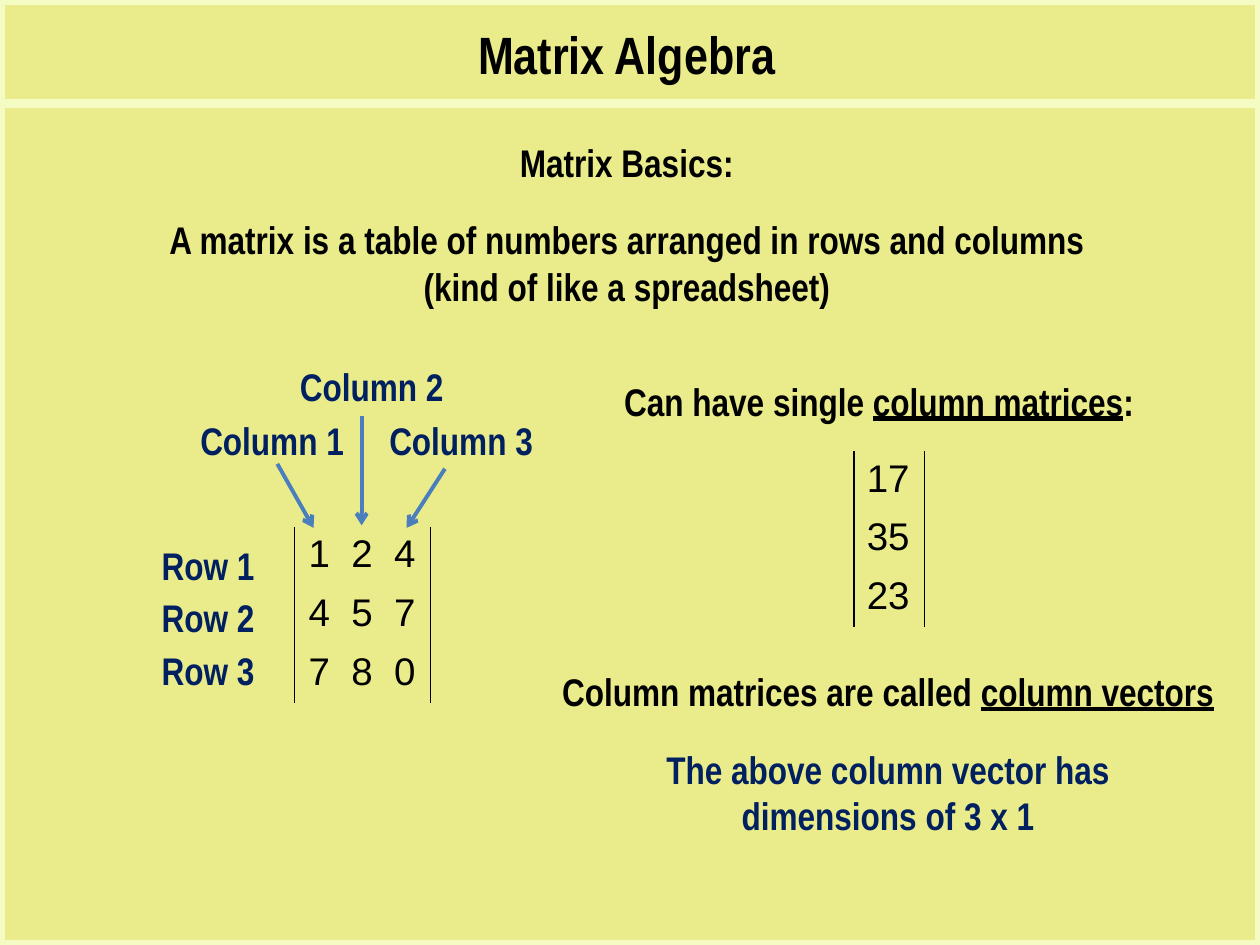
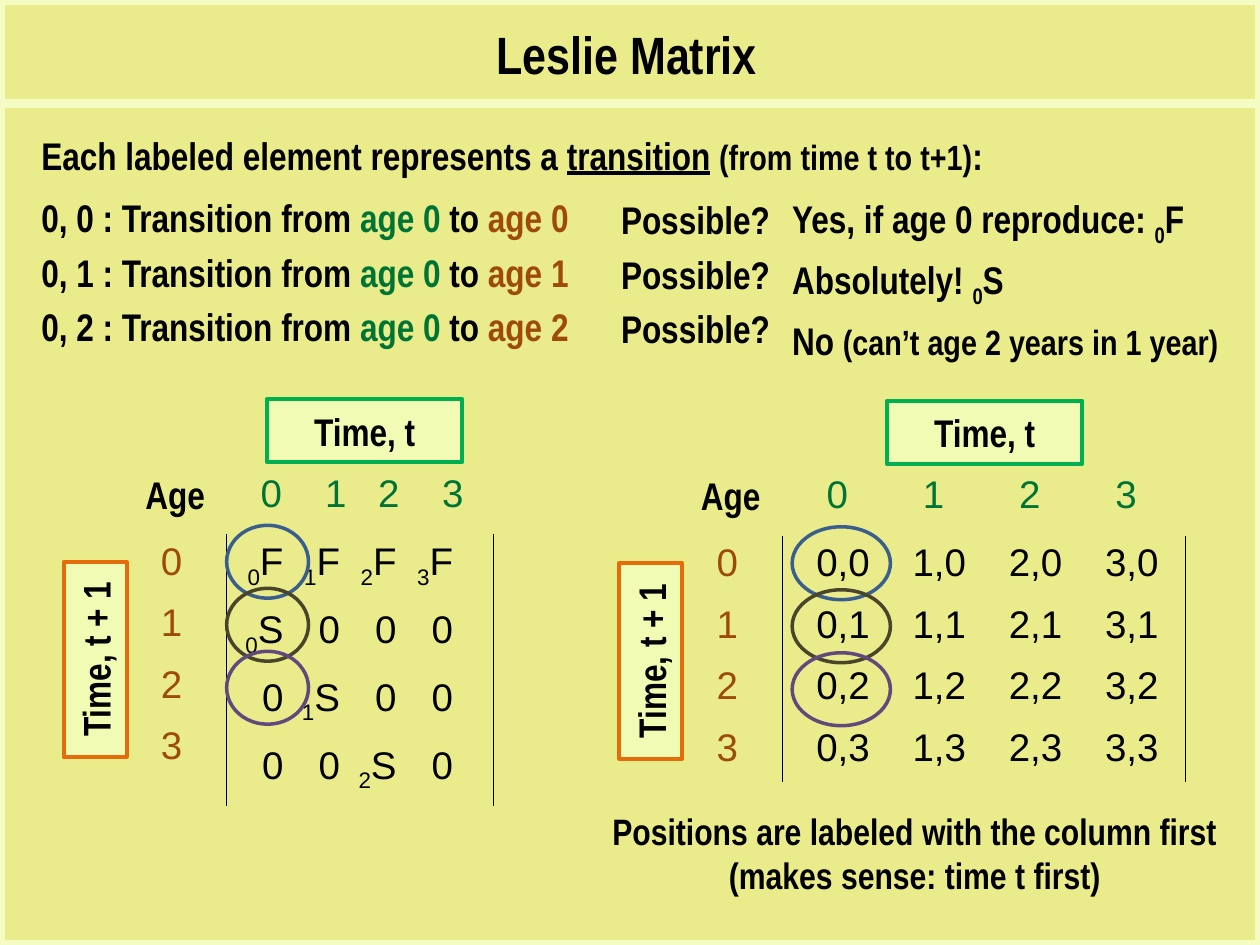
import collections
import dataclasses

import lxml.etree
import pptx
import pptx.dml.color
import pptx.enum.shapes
import pptx.enum.text
import pptx.oxml.ns
import pptx.util

Cm = pptx.util.Cm
Pt = pptx.util.Pt
qn = pptx.oxml.ns.qn
ALIGN = pptx.enum.text.PP_ALIGN
ANCHOR = pptx.enum.text.MSO_ANCHOR
SHAPE = pptx.enum.shapes.MSO_SHAPE


@dataclasses.dataclass(frozen=True)
class Theme:
    background: str = "EAEC8C"
    band: str = "F4FCC4"
    ink: str = "000000"
    navy: str = "002060"
    arrow: str = "4B7EBC"
    panel: str = "F1FBB3"
    now: str = "007434"
    later: str = "9D4B07"
    now_line: str = "00B050"
    later_line: str = "E46C0A"
    rings: tuple = ("3A5F8C", "4A452A", "604A7B")
    title_size: int = 30
    text_size: int = 22
    footnote_size: int = 21
    aside_size: int = 20
    label_font: str = "Arial Narrow"
    number_font: str = "Arial"


THEME = Theme()
LABEL = {"name": THEME.label_font, "size": THEME.text_size, "bold": True, "color": THEME.ink}
TITLE = {**LABEL, "size": THEME.title_size}
NAVY_LABEL = {**LABEL, "color": THEME.navy}
NUMBER = {**LABEL, "name": THEME.number_font, "bold": False}
UNDERLINED = {"underline": True}
SUBSCRIPT = {"baseline": "-25000"}
ASIDE = {"size": THEME.aside_size}
NOW = {"color": THEME.now}
LATER = {"color": THEME.later}
LABEL_HEIGHT = 1.19
NO_STYLE_NO_GRID = "{2D5ABB26-0587-4C30-8999-92F81FD0307C}"


class Box(collections.namedtuple("Box", "left top width height")):
    def inner(self, left, top, width, height):
        return Box(self.left + left, self.top + top, width, height)

    def lengths(self):
        return [Cm(value) for value in self]


def rgb(color):
    return pptx.dml.color.RGBColor.from_string(color)


def format_run(run, style):
    for key, value in style.items():
        if key == "color":
            run.font.color.rgb = rgb(value)
        elif key == "baseline":
            run._r.get_or_add_rPr().set(key, value)
        else:
            setattr(run.font, key, Pt(value) if key == "size" else value)


def write(frame, paragraphs, style, align=ALIGN.LEFT, gaps=(), tabs=()):
    for index, runs in enumerate(paragraphs):
        paragraph = frame.add_paragraph() if index else frame.paragraphs[0]
        paragraph.alignment = align
        paragraph.space_before = Pt(gaps[index] if index < len(gaps) else 0)
        if tabs:
            stops = lxml.etree.SubElement(paragraph._p.get_or_add_pPr(), qn("a:tabLst"))
            for position in tabs:
                lxml.etree.SubElement(stops, qn("a:tab"), pos=str(Cm(position)), algn="r")
        for part in [runs] if isinstance(runs, str) else runs:
            text, override = (part, {}) if isinstance(part, str) else part
            run = paragraph.add_run()
            run.text = text
            format_run(run, {**style, **override})


def set_frame(frame, anchor=ANCHOR.TOP):
    settings = {
        "word_wrap": True,
        "auto_size": pptx.enum.text.MSO_AUTO_SIZE.NONE,
        "vertical_anchor": anchor,
    }
    for key, value in settings.items():
        setattr(frame, key, value)


def add_text(slide, box, paragraphs, style=LABEL, align=ALIGN.CENTER, gaps=()):
    frame = slide.shapes.add_textbox(*box.lengths()).text_frame
    set_frame(frame)
    write(frame, paragraphs, style, align, gaps)


def fill_placeholder(shape, box, paragraphs, style, align, gaps=(), anchor=ANCHOR.TOP):
    for key, value in zip(box._fields, box.lengths()):
        setattr(shape, key, value)
    set_frame(shape.text_frame, anchor)
    write(shape.text_frame, paragraphs, style, align, gaps)
    for paragraph in shape.text_frame.paragraphs:
        properties = paragraph._p.get_or_add_pPr()
        for key in ("marL", "indent"):
            properties.set(key, "0")
        lxml.etree.SubElement(properties, qn("a:buNone"))


def add_shape(slide, kind, box, line, width, fill=None):
    shape = slide.shapes.add_shape(kind, *box.lengths())
    shape.shadow.inherit = False
    shape.line.color.rgb = rgb(line)
    shape.line.width = Pt(width)
    if fill:
        shape.fill.solid()
        shape.fill.fore_color.rgb = rgb(fill)
    else:
        shape.fill.background()
    return shape


def add_line(slide, start, end, color, width, arrow=False):
    ends = [Cm(value) for value in (*start, *end)]
    connector = slide.shapes.add_connector(pptx.enum.shapes.MSO_CONNECTOR.STRAIGHT, *ends)
    connector.line.color.rgb = rgb(color)
    connector.line.width = Pt(width)
    properties = connector.element.spPr
    if arrow:
        lxml.etree.SubElement(properties.find(qn("a:ln")), qn("a:tailEnd"), type="arrow")
    lxml.etree.SubElement(properties, qn("a:effectLst"))
    return connector


def add_side_borders(cell):
    properties = cell._tc.get_or_add_tcPr()
    for index, side in enumerate(("a:lnL", "a:lnR")):
        line = lxml.etree.Element(qn(side), w=str(Pt(1)))
        fill = lxml.etree.SubElement(line, qn("a:solidFill"))
        lxml.etree.SubElement(fill, qn("a:srgbClr"), val=THEME.ink)
        properties.insert(index, line)


def add_matrix(slide, box, rows, style=NUMBER, align=ALIGN.LEFT, tabs=(), bars=True):
    table = slide.shapes.add_table(len(rows), 1, *box.lengths()).table
    table.first_row = table.horz_banding = False
    table._tbl.tblPr.find(qn("a:tableStyleId")).text = NO_STYLE_NO_GRID
    for index, runs in enumerate(rows):
        table.rows[index].height = Cm(box.height / len(rows))
        cell = table.cell(index, 0)
        cell.fill.background()
        if tabs:
            cell.margin_right = 0
        if bars:
            add_side_borders(cell)
        write(cell.text_frame, [runs], style, align, tabs=tabs)


def term(text):
    return [(text[:-1], SUBSCRIPT), text[-1]] if text[-1].isalpha() else [text]


def tabbed(cells):
    return [part for cell in cells for part in ("\t", *term(cell))]


def even_tabs(first, step, count):
    return [first + step * index for index in range(count)]


def add_master_bands(presentation, slide):
    master = presentation.slide_master
    master.background.fill.solid()
    master.background.fill.fore_color.rgb = rgb(THEME.background)
    bands = (
        add_line(slide, (0, 2.08), (25.4, 2.08), THEME.band, 5),
        add_shape(slide, SHAPE.RECTANGLE, Box(0, 0, 25.4, 19.05), THEME.band, 6),
    )
    for number, band in enumerate(bands, 20):
        band.element.xpath(".//p:cNvPr")[0].set("id", str(number))
        master.shapes.element.append(band.element)


def add_slide(presentation, title):
    slide = presentation.slides.add_slide(presentation.slide_layouts[1])
    fill_placeholder(slide.shapes.title, Box(1.88, 0.3, 21.51, 1.55), [title], TITLE,
                     ALIGN.CENTER, anchor=ANCHOR.MIDDLE)
    return slide


def add_labeled_matrix(slide, box):
    for number, (left, top) in enumerate(((1.29, 1.09), (3.3, 0), (5.1, 1.09)), 1):
        add_text(slide, box.inner(left, top, 3.71, LABEL_HEIGHT), [f"Column {number}"], NAVY_LABEL)
    for index in range(3):
        add_text(slide, box.inner(0, 3.61 + 1.06 * index, 3.71, LABEL_HEIGHT),
                 [f"Row {index + 1}"], NAVY_LABEL)
    add_matrix(slide, box.inner(3.6, 3.43, 2.74, 3.56),
               [tabbed(digits) for digits in ("124", "457", "780")],
               tabs=even_tabs(0.46, 0.86, 3))
    arrows = ((3.25, 2.16, 3.98, 3.45), (4.95, 1.19, 4.95, 3.4), (6.63, 2.26, 5.86, 3.45))
    for x1, y1, x2, y2 in arrows:
        add_line(slide, (box.left + x1, box.top + y1), (box.left + x2, box.top + y2),
                 THEME.arrow, 2.25, arrow=True)


def add_column_vector(slide, box):
    add_text(slide, box.inner(0, 0, box.width, LABEL_HEIGHT),
             [["Can have single ", ("column matrices", UNDERLINED), ":"]])
    add_matrix(slide, box.inner(6.55, 1.6, 1.42, 3.56), ["17", "35", "23"])
    navy = {"color": THEME.navy}
    add_text(slide, box.inner(0.13, 5.85, 14.2, 3.71), [
        ["Column matrices are called ", ("column vectors", UNDERLINED)],
        [("The above column vector has", navy)],
        [("dimensions of 3 x 1", navy)],
    ], gaps=(0, 18))


def build_matrix_slide(slide):
    fill_placeholder(slide.placeholders[1], Box(1.14, 2.67, 22.99, 4.14), [
        "Matrix Basics:",
        "A matrix is a table of numbers arranged in rows and columns",
        "(kind of like a spreadsheet)",
    ], LABEL, ALIGN.CENTER, gaps=(0, 18))
    add_labeled_matrix(slide, Box(2.34, 7.19, 8.81, 6.99))
    add_column_vector(slide, Box(10.67, 7.49, 14.1, 9.56))


def add_time_box(slide, box, text, line, rotation=0):
    shape = add_shape(slide, SHAPE.RECTANGLE, box, line, 2.25, THEME.panel)
    shape.rotation = rotation
    set_frame(shape.text_frame, ANCHOR.MIDDLE)
    write(shape.text_frame, [text], LABEL, ALIGN.CENTER)


def add_age_panel(slide, box, rows, row_height, tabs, header_tabs, time_left, ring_left, ring_width):
    ages = [str(age) for age in range(4)]
    matrix_left, matrix_top = 3.29, 2.72
    width = box.width - matrix_left
    add_time_box(slide, box.inner(time_left, 0, 3.94, 1.27), "Time, t", THEME.now_line)
    add_time_box(slide, box.inner(-1.33, 4.61, 3.94, 1.27), "Time, t + 1", THEME.later_line, 270)
    add_text(slide, box.inner(1.08, 1.32, 2.34, LABEL_HEIGHT), ["Age"])
    add_matrix(slide, box.inner(matrix_left, 1.35, width, LABEL_HEIGHT), [tabbed(ages)],
               {**NUMBER, **NOW}, tabs=header_tabs, bars=False)
    add_matrix(slide, box.inner(1.33, matrix_top, 1.7, 4.96), ages,
               {**NUMBER, **LATER}, ALIGN.CENTER, bars=False)
    add_matrix(slide, box.inner(matrix_left, matrix_top, width, row_height * len(rows)),
               [tabbed(cells) for cells in rows], tabs=tabs)
    for index, color in enumerate(THEME.rings):
        add_shape(slide, SHAPE.OVAL,
                  box.inner(ring_left, 2.54 + 1.27 * index, ring_width, 1.47), color, 2)


def add_transitions(slide, box):
    intro = ["Each labeled element represents a ", ("transition", UNDERLINED), " ",
             ("(from time t to t+1)", ASIDE), ":"]
    steps = [[f"0, {age} : Transition from ", ("age 0", NOW), " to ", (f"age {age}", LATER)]
             for age in range(3)]
    fill_placeholder(slide.placeholders[1], box, [intro, *steps], LABEL, ALIGN.LEFT,
                     gaps=(0, 9, 4.8, 4.8))
    add_text(slide, box.inner(11.69, 1.29, 4.24, 3.41), ["Possible?"] * 3,
             align=ALIGN.LEFT, gaps=(0, 4.8, 4.8))
    add_text(slide, box.inner(15.14, 1.27, 9.6, 3.43), [
        ["Yes, if age 0 reproduce: ", *term("0F")],
        ["Absolutely! ", *term("0S")],
        ["No ", ("(can’t age 2 years in 1 year)", ASIDE)],
    ], align=ALIGN.LEFT, gaps=(0, 4.8, 4.8))


def build_leslie_slide(slide):
    add_transitions(slide, Box(0.58, 2.54, 23.5, 4.7))
    leslie = [row.split() for row in ("0F 1F 2F 3F", "0S 0 0 0", "0 1S 0 0", "0 0 2S 0")]
    add_age_panel(slide, Box(1.28, 8.05, 8.67, 8.2), leslie, 1.37, even_tabs(0.89, 1.14, 4),
                  (0.86, 2.16, 3.23, 4.52), time_left=4.1, ring_left=3.29, ring_width=1.65)
    positions = [[f"{column},{row}" for column in range(4)] for row in range(4)]
    add_age_panel(slide, Box(12.48, 8.08, 11.42, 7.68), positions, 1.24, even_tabs(1.51, 1.94, 4),
                  even_tabs(1.07, 1.94, 4), time_left=5.4, ring_left=3.49, ring_width=1.98)
    add_text(slide, Box(11.63, 16.18, 13.62, 2.06), [
        "Positions are labeled with the column first",
        "(makes sense: time t first)",
    ], {**LABEL, "size": THEME.footnote_size})


def main():
    presentation = pptx.Presentation()
    presentation.slide_width = Cm(25.4)
    presentation.slide_height = Cm(19.05)
    matrix_slide = add_slide(presentation, "Matrix Algebra")
    add_master_bands(presentation, matrix_slide)
    build_matrix_slide(matrix_slide)
    build_leslie_slide(add_slide(presentation, "Leslie Matrix"))
    presentation.save("out.pptx")


if __name__ == "__main__":
    main()
